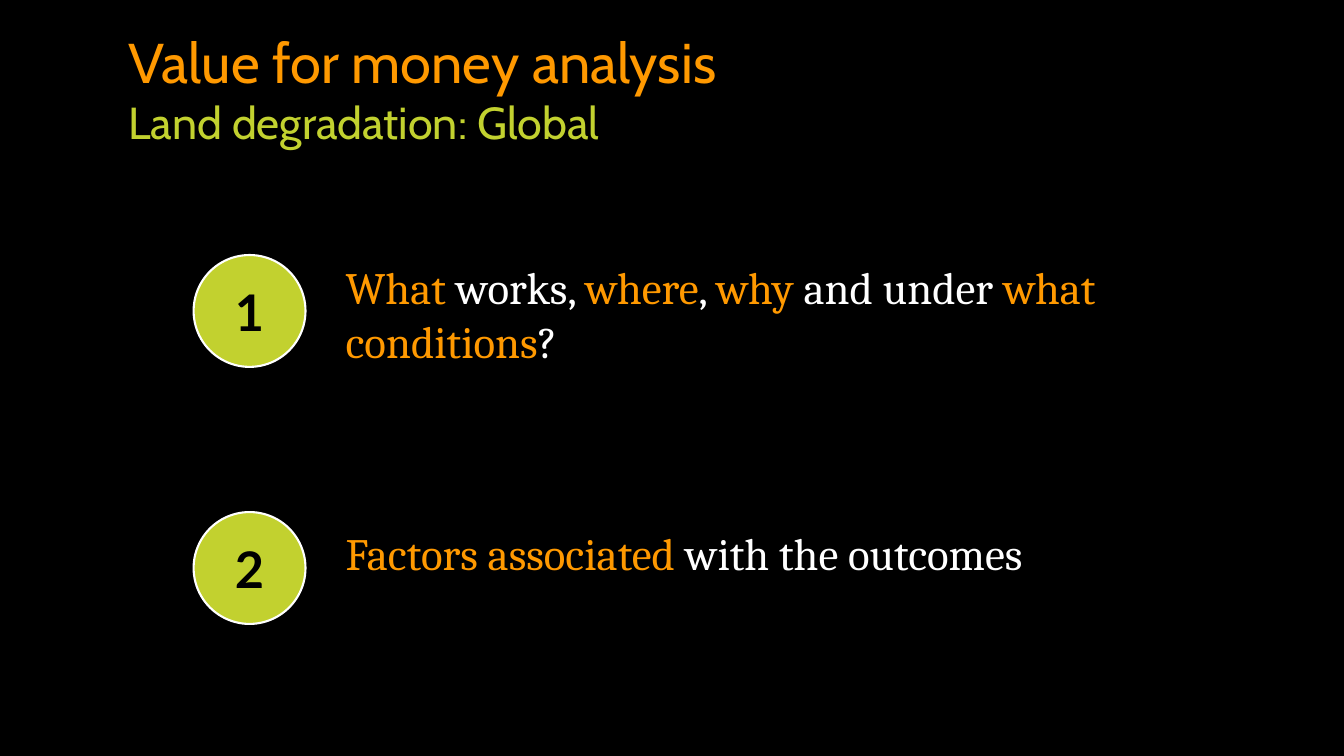
from pptx import Presentation
from pptx.dml.color import RGBColor
from pptx.enum.shapes import MSO_SHAPE
from pptx.enum.text import MSO_ANCHOR, MSO_AUTO_SIZE, PP_ALIGN
from pptx.util import Inches, Pt

OVAL = MSO_SHAPE.OVAL
TOP, MIDDLE = MSO_ANCHOR.TOP, MSO_ANCHOR.MIDDLE
LEFT, CENTER = PP_ALIGN.LEFT, PP_ALIGN.CENTER
FIXED = MSO_AUTO_SIZE.NONE

BLACK = RGBColor(0x00, 0x00, 0x00)
WHITE = RGBColor(0xFF, 0xFF, 0xFF)
ORANGE = RGBColor(0xFF, 0x99, 0x00)
LIME = RGBColor(0xC2, 0xD1, 0x2F)

HEAD = {"name": "Cabin", "size": Pt(40)}
SUB = {"name": "Cabin", "size": Pt(32)}
BODY = {"name": "Cambria", "size": Pt(32)}
BADGE = {"name": "Lato", "size": Pt(36), "bold": True}

# Each point: drop of its text below the badge top, then (words, colour) runs
POINTS = [
    (0, [("What", ORANGE), (" works, ", WHITE), ("where", ORANGE),
         (", ", WHITE), ("why", ORANGE), (" and under ", WHITE),
         ("what conditions", ORANGE), ("?", WHITE)]),
    (0.09, [("Factors associated", ORANGE), (" with the outcomes", WHITE)]),
]
PITCH = 2.55   # from one point to the next
DISC = 1.11    # badge diameter
INDENT = 1.41  # from badge left to text left


def place(shape, x, y, w, h):
    shape.left, shape.top = Inches(x), Inches(y)
    shape.width, shape.height = Inches(w), Inches(h)


def set_frame(frame, anchor):
    form = {"word_wrap": True, "auto_size": FIXED, "vertical_anchor": anchor}
    for key, value in form.items():
        setattr(frame, key, value)


def add_runs(para, runs, form, align=LEFT):
    para.alignment = align
    for words, color in runs:
        run = para.add_run()
        run.text = words
        for key, value in form.items():
            setattr(run.font, key, value)
        run.font.color.rgb = color


# Title with its second line
def add_title(slide, x, y, w, h):
    title = slide.shapes.title
    place(title, x, y, w, h)
    frame = title.text_frame
    set_frame(frame, TOP)
    add_runs(frame.paragraphs[0], [("Value for money analysis", ORANGE)], HEAD)
    add_runs(frame.add_paragraph(), [("Land degradation: Global", LIME)], SUB)


# Numbered badge
def add_badge(slide, label, x, y):
    disc = slide.shapes.add_shape(OVAL, 0, 0, 0, 0)
    place(disc, x, y, DISC, DISC)
    disc.shadow.inherit = False
    disc.fill.solid()
    disc.fill.fore_color.rgb = LIME
    disc.line.color.rgb = WHITE
    disc.line.width = Pt(1.5)
    set_frame(disc.text_frame, MIDDLE)
    add_runs(disc.text_frame.paragraphs[0], [(label, BLACK)], BADGE, CENTER)


# List of badges, each with its text to the right
def add_points(slide, x, y, w):
    for i, (drop, runs) in enumerate(POINTS):
        top = y + i * PITCH
        add_badge(slide, str(i + 1), x, top)
        box = slide.shapes.add_textbox(0, 0, 0, 0)
        place(box, x + INDENT, top + drop, w - INDENT, 1.18)
        set_frame(box.text_frame, TOP)
        add_runs(box.text_frame.paragraphs[0], runs, BODY)


def main():
    deck = Presentation()
    deck.slide_width, deck.slide_height = Inches(13.33), Inches(7.5)
    slide = deck.slides.add_slide(deck.slide_layouts.get_by_name("Title Only"))
    slide.background.fill.solid()
    slide.background.fill.fore_color.rgb = BLACK
    add_title(slide, 1.17, 0.22, 10.83, 1.31)
    add_points(slide, 1.92, 2.53, 10.91)
    deck.save("out.pptx")


if __name__ == "__main__":
    main()
